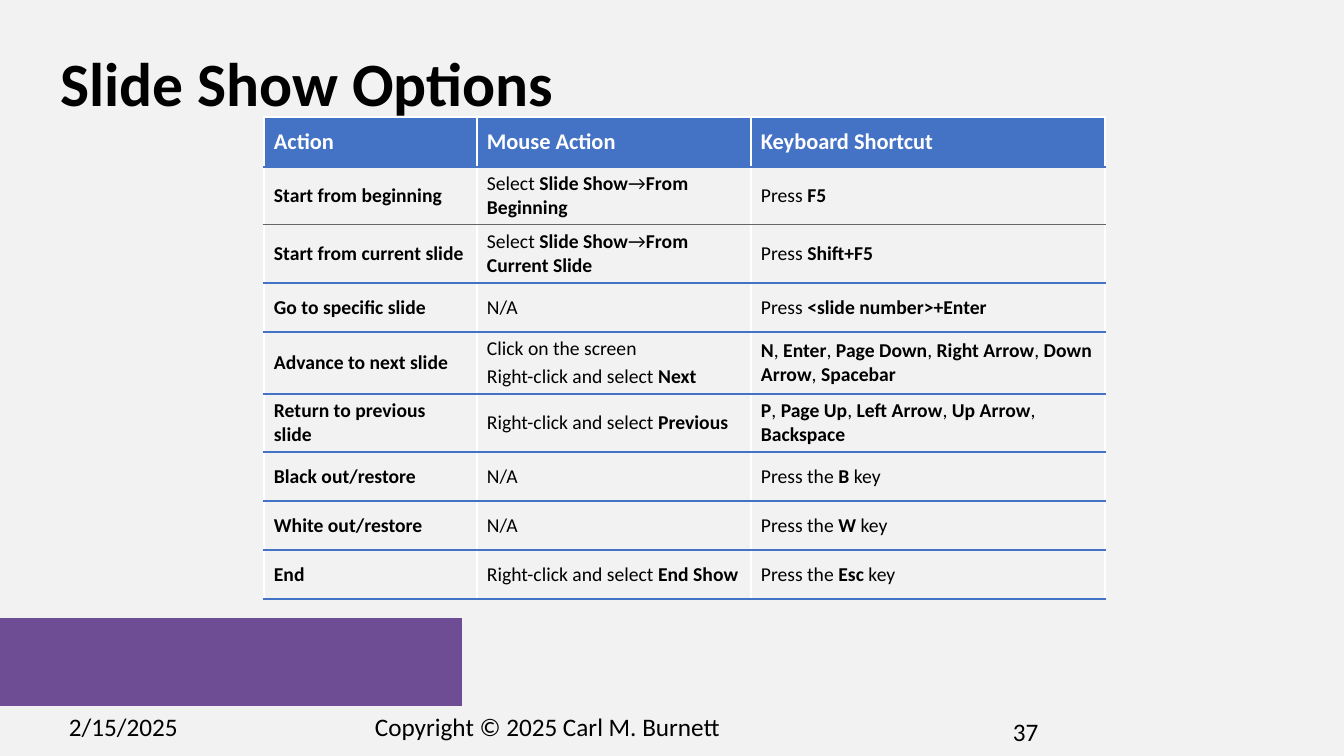
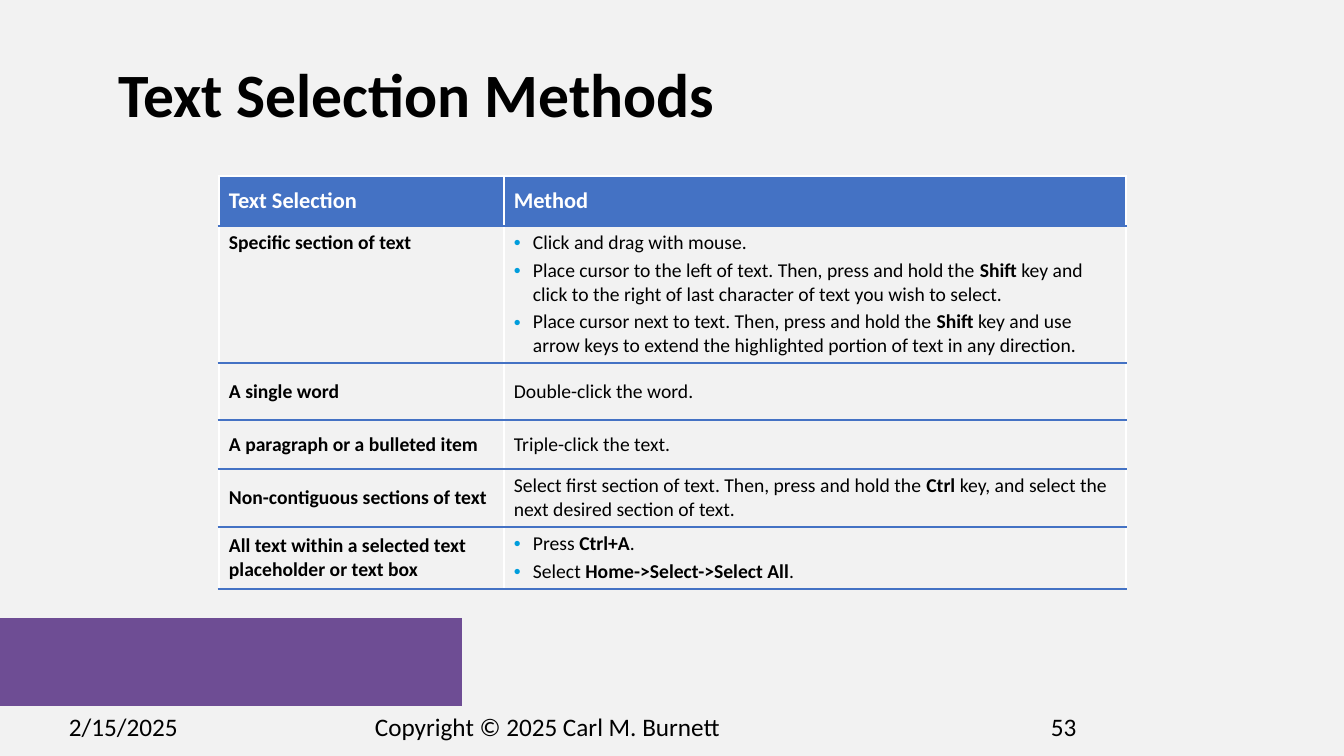
from lxml import etree
from pptx import Presentation, util as u
from pptx.dml.color import RGBColor
from pptx.enum import shapes, text
from pptx.oxml import ns

SLIDE_W, SLIDE_H = 1344, 756
EMU_PER_PX = 12192000 / SLIDE_W
FONT = "Calibri"
COLORS = {
    "background": "F2F2F2",
    "band": "6E4D94",
    "header": "4472C4",
    "divider": "FFFFFF",
    "hairline": "666666",
    "bullet": "009DDC",
    "text": "000000",
    "header_text": "FFFFFF",
}
BULLET = "•"
BULLET_INDENT = 19
DIVIDER = ("divider", 2.25)
RULE = ("header", 1.5)
HAIRLINE = ("hairline", 0.75)

SHOW_OPTIONS = [
    ["Action", "Mouse Action", "Keyboard Shortcut"],
    ["**Start from beginning**", "Select **Slide Show**→**From Beginning**", "Press **F5**"],
    ["**Start from current slide**", "Select **Slide Show**→**From Current Slide**",
     "Press **Shift+F5**"],
    ["**Go to specific slide**", "N/A", "Press **<slide number>+Enter**"],
    ["**Advance to next slide**", "Click on the screen\nRight-click and select **Next**",
     "**N**, **Enter**, **Page Down**, **Right Arrow**, **Down Arrow**, **Spacebar**"],
    ["**Return to previous slide**", "Right-click and select **Previous**",
     "**P**, **Page Up**, **Left Arrow**, **Up Arrow**, **Backspace**"],
    ["**Black out/restore**", "N/A", "Press the **B** key"],
    ["**White out/restore**", "N/A", "Press the **W** key"],
    ["**End**", "Right-click and select **End Show**", "Press the **Esc** key"],
]

SELECTION_METHODS = [
    ["Text Selection", "Method"],
    ["**Specific section of text**",
     "•Click and drag with mouse.\n"
     "•Place cursor to the left of text. Then, press and hold the **Shift **key and "
     "click to the right of last character of text you wish to select.\n"
     "•Place cursor next to text. Then, press and hold the **Shift** key and use "
     "arrow keys to extend the highlighted portion of text in any direction."],
    ["**A single word**", "Double-click the word."],
    ["**A paragraph or a bulleted item**", "Triple-click the text."],
    ["**Non-contiguous sections of text**",
     "Select first section of text. Then, press and hold the **Ctrl** key, and select "
     "the next desired section of text."],
    ["**All text within a selected text placeholder or text box**",
     "•Press **Ctrl+A**.\n•Select **Home->Select->Select All**."],
]


def px(length):
    return u.Emu(round(length * EMU_PER_PX))


def color(name):
    return RGBColor.from_string(COLORS[name])


def set_font(font, size, name="text"):
    font.name = FONT
    font.size = u.Pt(size)
    font.color.rgb = color(name)


def add_child(parent, tag, **attributes):
    return etree.SubElement(parent, ns.qn(tag), attributes)


def add_title(page, words, left, top, width, height):
    title = page.shapes.title
    title.left, title.top, title.width, title.height = map(px, (left, top, width, height))
    frame = title.text_frame
    frame.text = words
    frame.auto_size = text.MSO_AUTO_SIZE.NONE
    frame.vertical_anchor = text.MSO_ANCHOR.TOP
    para = frame.paragraphs[0]
    para.alignment = text.PP_ALIGN.LEFT
    para.line_spacing = 0.9
    set_font(para.font, 44)
    para.font.bold = True


def add_band(page):
    band = page.shapes.add_shape(
        shapes.MSO_SHAPE.RECTANGLE, 0, px(618), px(462), px(88))
    band.shadow.inherit = False
    band.fill.solid()
    band.fill.fore_color.rgb = color("band")
    band.line.fill.background()


def add_footer_text(page, words, left, top, width):
    box = page.shapes.add_textbox(px(left), px(top), px(width), px(40))
    box.text_frame.word_wrap = True
    para = box.text_frame.paragraphs[0]
    para.text = words
    set_font(para.font, 18)


def add_page(deck, title, title_box, number, number_box):
    """Add a page with its title, band and footer texts."""
    page = deck.slides.add_slide(deck.slide_layouts[5])
    add_title(page, title, *title_box)
    add_band(page)
    add_footer_text(page, "2/15/2025", 59, 706, 243)
    add_footer_text(page, "Copyright © 2025 Carl M. Burnett", 365, 706, 615)
    add_footer_text(page, number, *number_box)
    return page


def set_bullet(para):
    props = para._p.get_or_add_pPr()
    indent = px(BULLET_INDENT)
    props.set("marL", str(indent))
    props.set("indent", str(-indent))
    add_child(add_child(props, "a:buClr"), "a:srgbClr", val=COLORS["bullet"])
    add_child(props, "a:buFont", typeface="Arial")
    add_child(props, "a:buChar", char=BULLET)


def fill_text(cell, words, is_header):
    """Write lines as paragraphs; ** switches bold on and off."""
    frame = cell.text_frame
    for index, line in enumerate(words.split("\n")):
        para = frame.add_paragraph() if index else frame.paragraphs[0]
        if line.startswith(BULLET):
            set_bullet(para)
            line = line[len(BULLET):]
        if index:
            para.space_before = u.Pt(2.8)
        set_font(para.font, 16 if is_header else 14,
                 "header_text" if is_header else "text")
        for position, part in enumerate(line.split("**")):
            if part:
                span = para.add_run()
                span.text = part
                span.font.bold = is_header or position % 2 == 1


def set_borders(cell, top, bottom):
    props = cell._tc.get_or_add_tcPr()
    sides = {"a:lnL": DIVIDER, "a:lnR": DIVIDER, "a:lnT": top, "a:lnB": bottom}
    for index, (tag, (name, width)) in enumerate(sides.items()):
        line = add_child(props, tag, w=str(u.Pt(width)))
        add_child(add_child(line, "a:solidFill"), "a:srgbClr", val=COLORS[name])
        props.insert(index, line)


def add_text_table(page, left, top, widths, heights, rows, hairline_below=None):
    table = page.shapes.add_table(
        len(rows), len(widths), px(left), px(top), px(sum(widths)), px(sum(heights))).table
    table.horz_banding = False
    for column, width in zip(table.columns, widths):
        column.width = px(width)
    rules = [DIVIDER] + [HAIRLINE if r == hairline_below else RULE for r in range(len(rows))]
    for r, row in enumerate(rows):
        table.rows[r].height = px(heights[r])
        for c, words in enumerate(row):
            cell = table.cell(r, c)
            cell.margin_left = cell.margin_right = px(10)
            cell.margin_top = cell.margin_bottom = px(5)
            cell.vertical_anchor = text.MSO_ANCHOR.MIDDLE
            cell.fill.solid()
            cell.fill.fore_color.rgb = color("background" if r else "header")
            set_borders(cell, rules[r], rules[r + 1])
            fill_text(cell, words, r == 0)
    return table


def main():
    deck = Presentation()
    deck.slide_width, deck.slide_height = px(SLIDE_W), px(SLIDE_H)
    backdrop = deck.slide_master.background.fill
    backdrop.solid()
    backdrop.fore_color.rgb = color("background")

    page = add_page(deck, "Slide Show Options", (50, 48, 1192, 93), "37", (1003, 711, 313))
    add_text_table(page, 264, 117, [213, 274, 354],
                   [50, 58, 58, 49, 62, 58, 49, 49, 49], SHOW_OPTIONS, hairline_below=1)

    page = add_page(deck, "Text Selection Methods", (108, 59, 1129, 86), "53", (1041, 706, 243))
    table = add_text_table(page, 219, 176, [285, 622],
                           [50, 137, 57, 49, 58, 62], SELECTION_METHODS)
    for row, column in ((1, 0), (1, 1), (5, 1)):
        table.cell(row, column).vertical_anchor = text.MSO_ANCHOR.TOP

    deck.save("out.pptx")


if __name__ == "__main__":
    main()
